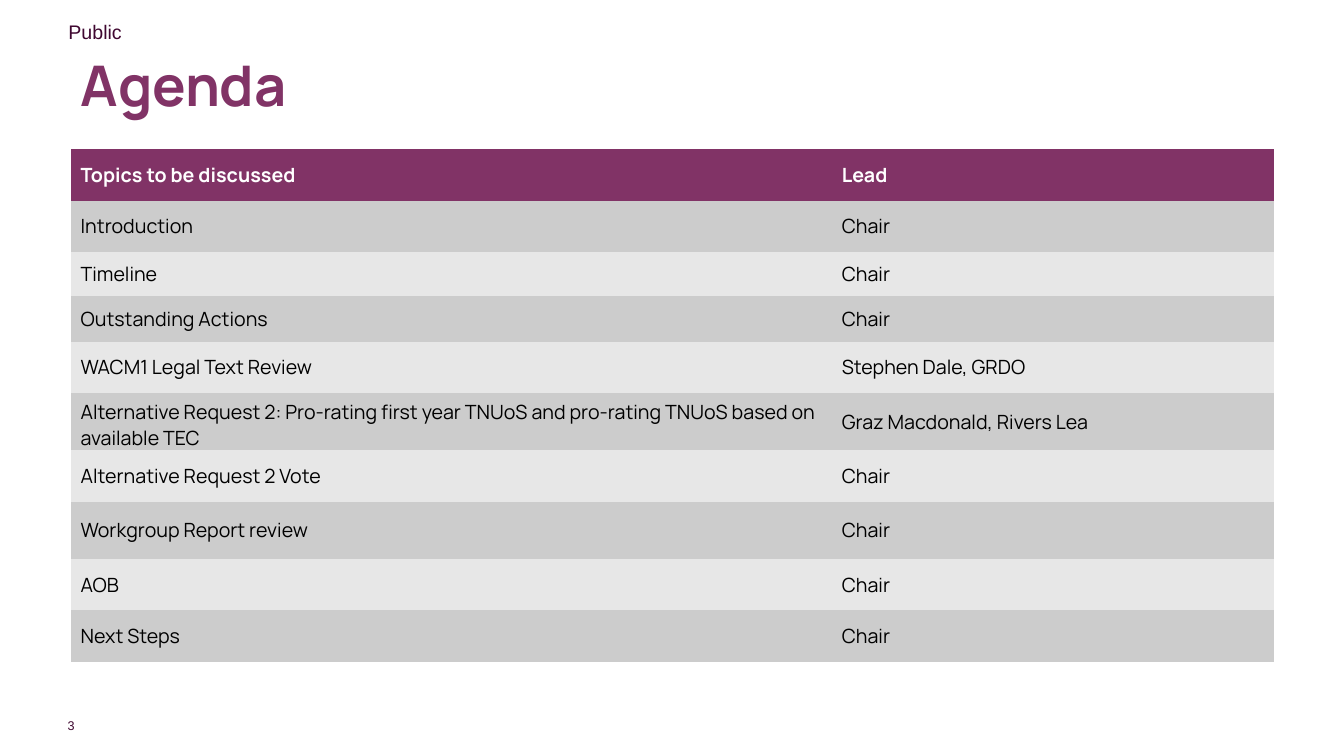
from pptx import Presentation
from pptx.dml.color import RGBColor
from pptx.enum.text import MSO_ANCHOR as Anchor, PP_ALIGN as Align
from pptx.oxml.ns import qn
from pptx.util import Inches, Pt

PLAIN_TABLE = "{2D5ABB26-0587-4C30-8999-92F81FD0307C}"


def color(value):
    return RGBColor.from_string(value)


class AgendaSlide:
    """Holds the agenda style and the slide being built."""

    heading_font, label_font = "Manrope", "Arial"
    plum, dark = "813366", "3F0730"
    bands = ("CCCCCC", "E7E7E7")

    def __init__(self, deck):
        self.slide = deck.slides.add_slide(deck.slide_layouts[6])

    def add_words(self, paragraph, words, size, font, tint, bold=False):
        run = paragraph.add_run()
        run.text = words
        run.font.size = Pt(size)
        run.font.name = font
        run.font.bold = bold
        run.font.color.rgb = color(tint)

    def text(self, box, words, size, font, tint, bold=False,
             anchor=Anchor.TOP, inset=None, wrap=True):
        frame = self.slide.shapes.add_textbox(*map(Inches, box)).text_frame
        frame.word_wrap = wrap
        frame.vertical_anchor = anchor
        if inset is not None:
            frame.margin_left = frame.margin_right = Inches(inset)
            frame.margin_top = frame.margin_bottom = Inches(inset)
        paragraph = frame.paragraphs[0]
        self.add_words(paragraph, words, size, font, tint, bold)
        return paragraph

    def table(self, box, widths, heights, rows):
        frame = self.slide.shapes.add_table(
            len(rows), len(widths), *map(Inches, box))
        agenda = frame.table
        next(frame.element.iter(qn("a:tableStyleId"))).text = PLAIN_TABLE
        for column, width in zip(agenda.columns, widths):
            column.width = Inches(width)
        for index, (row, height, entries) in enumerate(
                zip(agenda.rows, heights, rows)):
            row.height = Inches(height)
            header = index == 0
            band = self.plum if header else self.bands[(index - 1) % 2]
            tint = "FFFFFF" if header else "000000"
            for cell, words in zip(row.cells, entries):
                cell.fill.solid()
                cell.fill.fore_color.rgb = color(band)
                cell.vertical_anchor = Anchor.MIDDLE
                self.add_words(cell.text_frame.paragraphs[0], words, 14,
                               self.heading_font, tint, header)


def main():
    deck = Presentation()
    deck.slide_width, deck.slide_height = Inches(13.33), Inches(7.5)
    page = AgendaSlide(deck)

    page_number = page.text((0.59, 7.12, 0.15, 0.15), "3", 9, page.label_font,
                            page.dark, anchor=Anchor.MIDDLE, inset=0,
                            wrap=False)
    page_number.alignment = Align.RIGHT
    page.text((0.58, 0.15, 5, 0.34), "Public", 14, page.label_font, page.dark)
    title = page.text((0.7, 0.4, 10.62, 0.95), "Agenda", 40,
                      page.heading_font, page.plum, True, Anchor.MIDDLE)
    title.line_spacing = 0.9

    topics = [
        ("Topics to be discussed", "Lead"),
        ("Introduction", "Chair"),
        ("Timeline", "Chair"),
        ("Outstanding Actions", "Chair"),
        ("WACM1 Legal Text Review", "Stephen Dale, GRDO"),
        ("Alternative Request 2: Pro-rating first year TNUoS and "
         "pro-rating TNUoS based on available TEC",
         "Graz Macdonald, Rivers Lea"),
        ("Alternative Request 2 Vote", "Chair"),
        ("Workgroup Report review", "Chair"),
        ("AOB", "Chair"),
        ("Next Steps", "Chair"),
    ]
    heights = [0.51, 0.51, 0.44, 0.45, 0.51, 0.51, 0.51, 0.57, 0.51, 0.51]
    page.table((0.7, 1.48, 11.94, 5.09), (7.55, 4.39), heights, topics)
    deck.save("out.pptx")


if __name__ == "__main__":
    main()
